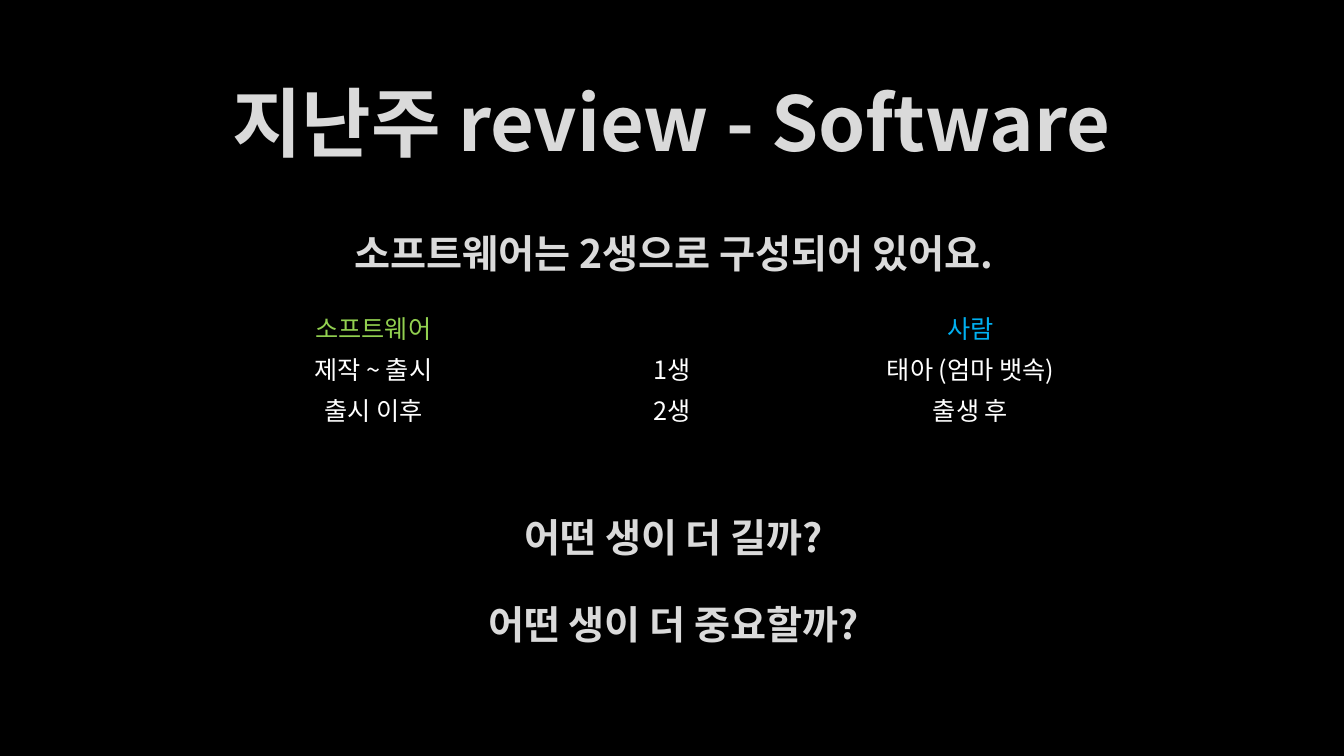
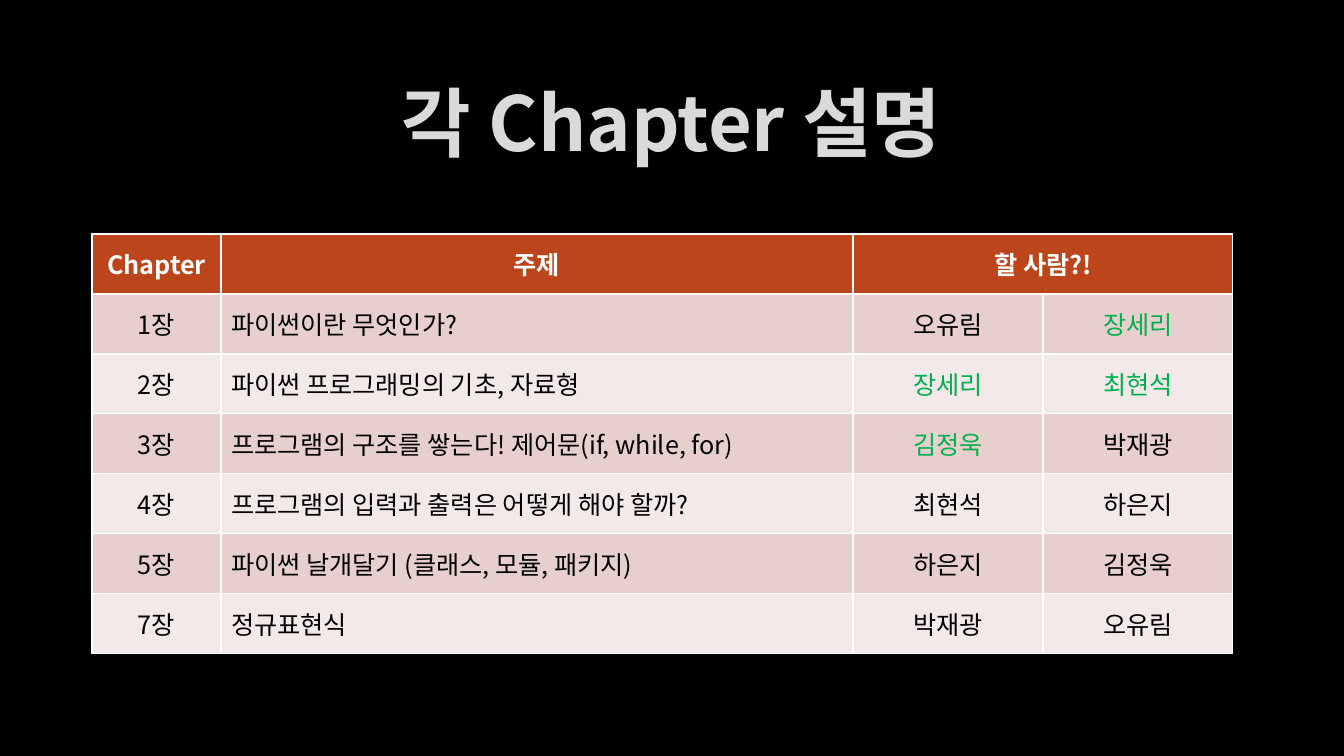
from pptx import Presentation
from pptx.dml.color import RGBColor
from pptx.enum.text import MSO_ANCHOR, PP_ALIGN
from pptx.oxml.ns import qn
from pptx.util import Pt
from lxml.etree import SubElement

WIDE, HIGH = 1344, 756
SCALE = 12192000 / WIDE
FONT = "Noto Sans CJK KR"
PLAIN = "{2D5ABB26-0587-4C30-8999-92F81FD0307C}"

BLACK = RGBColor(0x00, 0x00, 0x00)
WHITE = RGBColor(0xFF, 0xFF, 0xFF)
SILVER = RGBColor(0xDA, 0xDA, 0xDA)
LIME = RGBColor(0x92, 0xD0, 0x50)
SKY = RGBColor(0x00, 0xB0, 0xF0)
GREEN = RGBColor(0x00, 0xB0, 0x50)
RUST = RGBColor(0xBC, 0x45, 0x1B)
ROSE = RGBColor(0xE7, 0xCF, 0xCD)
PALE = RGBColor(0xF3, 0xE9, 0xE8)

TITLE = (101, 68, 1141, 107)
LIVES = [
    ["소프트웨어", "", "사람"],
    ["제작 ~ 출시", "1생", "태아 (엄마 뱃속)"],
    ["출시 이후", "2생", "출생 후"],
]
HEAD = ["Chapter", "주제", "할 사람?!", ""]
PLAN = [
    ["1장", "파이썬이란 무엇인가?", "오유림", "장세리"],
    ["2장", "파이썬 프로그래밍의 기초, 자료형", "장세리", "최현석"],
    ["3장", "프로그램의 구조를 쌓는다! 제어문(if, while, for)", "김정욱", "박재광"],
    ["4장", "프로그램의 입력과 출력은 어떻게 해야 할까?", "최현석", "하은지"],
    ["5장", "파이썬 날개달기 (클래스, 모듈, 패키지)", "하은지", "김정욱"],
    ["7장", "정규표현식", "박재광", "오유림"],
]
MARKED = {(1, 3), (2, 2), (2, 3), (3, 2)}


def px(size):
    return round(size * SCALE)


def style(para, size, color, bold=False, align=PP_ALIGN.CENTER):
    para.alignment = align
    font = para.font
    font.size, font.bold, font.name = Pt(size), bold, FONT
    font.color.rgb = color
    SubElement(font._element, qn("a:ea")).set("typeface", FONT)


def add_page(deck, text):
    page = deck.slides.add_slide(deck.slide_layouts[5])
    title = page.shapes.title
    title.left, title.top, title.width, title.height = map(px, TITLE)
    title.text = text
    title.text_frame.vertical_anchor = MSO_ANCHOR.MIDDLE
    style(title.text_frame.paragraphs[0], 54, SILVER, True)
    return page


def add_lines(page, box, lines):
    frame = page.shapes.add_textbox(*map(px, box)).text_frame
    frame.word_wrap = True
    frame.vertical_anchor = MSO_ANCHOR.MIDDLE
    frame.margin_left = px(14)
    frame.text = "\n".join(lines)
    for para in frame.paragraphs:
        style(para, 28, SILVER, True)
        para.line_spacing = 1.5
        para.space_before, para.space_after = Pt(5.6), Pt(6)


def add_grid(page, box, rows, wides):
    shape = page.shapes.add_table(len(rows), len(wides), *map(px, box))
    grid = shape.table
    for col, wide in zip(grid.columns, wides):
        col.width = px(wide)
    for row, texts in zip(grid.rows, rows):
        row.height = px(box[3] / len(rows))
        for cell, text in zip(row.cells, texts):
            cell.text = text
    return grid


def add_lives(page, box):
    grid = add_grid(page, box, LIVES, [box[2] / 3] * 3)
    grid._tbl.tblPr.find(qn("a:tableStyleId")).text = PLAIN
    heads = [LIME, WHITE, SKY]
    for i, row in enumerate(grid.rows):
        for cell, head in zip(row.cells, heads):
            cell.fill.background()
            style(cell.text_frame.paragraphs[0], 18, WHITE if i else head)


def add_plan(page, box):
    grid = add_grid(page, box, [HEAD] + PLAN, [129, 632, 190, 190])
    grid.cell(0, 2).merge(grid.cell(0, 3))
    for i, row in enumerate(grid.rows):
        for j, cell in enumerate(row.cells):
            cell.vertical_anchor = MSO_ANCHOR.MIDDLE
            cell.fill.solid()
            cell.fill.fore_color.rgb = (ROSE if i % 2 else PALE) if i else RUST
            ink = GREEN if (i, j) in MARKED else BLACK if i else WHITE
            align = PP_ALIGN.LEFT if i and j == 1 else PP_ALIGN.CENTER
            style(cell.text_frame.paragraphs[0], 18, ink, i == 0, align)


def add_review(deck):
    page = add_page(deck, "지난주 review - Software")
    add_lines(page, (101, 213, 1141, 57), ["소프트웨어는 2생으로 구성되어 있어요."])
    add_lives(page, (224, 304, 896, 123))
    add_lines(page, (101, 445, 1141, 247),
              ["어떤 생이 더 길까?", "어떤 생이 더 중요할까?"])


def add_topics(deck):
    page = add_page(deck, "각 Chapter 설명")
    add_plan(page, (92, 234, 1141, 420))


def main():
    deck = Presentation()
    deck.slide_width, deck.slide_height = px(WIDE), px(HIGH)
    back = deck.slide_master.background.fill
    back.solid()
    back.fore_color.rgb = BLACK
    add_review(deck)
    add_topics(deck)
    deck.save("out.pptx")


if __name__ == "__main__":
    main()
